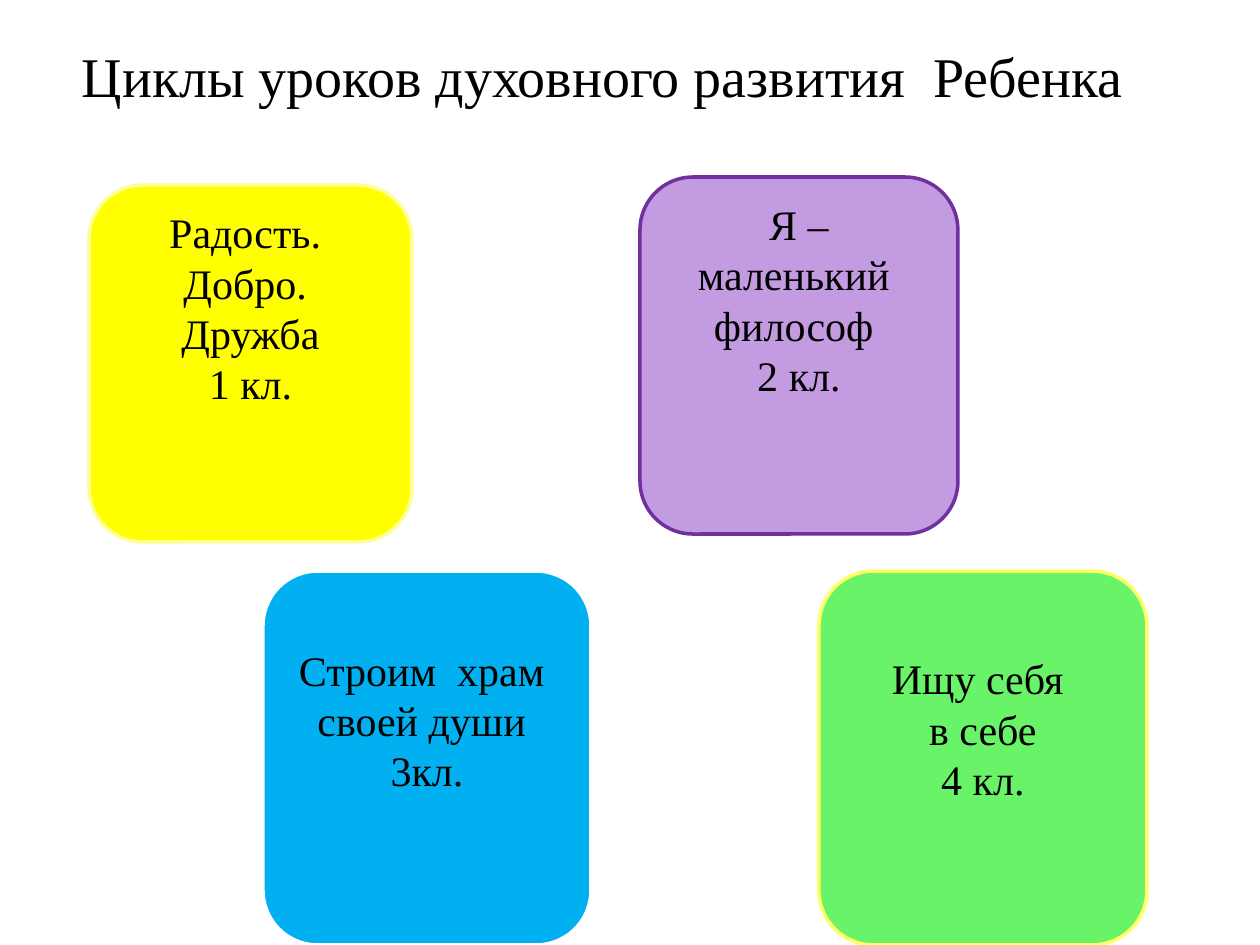
from dataclasses import dataclass

from pptx import Presentation
from pptx import util as u
from pptx.dml.color import RGBColor
from pptx.enum import shapes, text

SCALE = 914400 / 126


def px(n):
    return u.Emu(round(n * SCALE))


@dataclass(frozen=True)
class Theme:
    font: str = "Times New Roman"
    ink: str = "000000"
    head: int = 32
    body: int = 24
    lead: float = 28.8
    line: int = 2
    yellow: tuple = ("FFFF00", "FFFF99")
    purple: tuple = ("C39BE1", "7030A0")
    blue: tuple = ("00B0F0", "FFFFFF")
    green: tuple = ("69F369", "FFFF66")


def write(frame, lines, font, size, ink, align, lead=None, top=6, wrap=True):
    frame.word_wrap = wrap
    frame.auto_size = text.MSO_AUTO_SIZE.NONE
    frame.vertical_anchor = text.MSO_ANCHOR.TOP
    frame.margin_top = px(top)
    for i, line in enumerate(lines):
        para = frame.paragraphs[0] if i == 0 else frame.add_paragraph()
        para.alignment = align
        if lead:
            para.line_spacing = u.Pt(lead)
        run = para.add_run()
        run.text = line
        run.font.name = font
        run.font.size = u.Pt(size)
        run.font.color.rgb = RGBColor.from_string(ink)


class Deck:
    def __init__(self, theme):
        self.theme = theme
        self.file = Presentation()
        self.file.slide_width = px(1260)
        self.file.slide_height = px(945)
        self.slide = self.file.slides.add_slide(self.file.slide_layouts[5])

    def title(self, line, x, y, w, h):
        t = self.theme
        box = self.slide.shapes.title
        box.left, box.top, box.width, box.height = map(px, (x, y, w, h))
        write(box.text_frame, [line], font=t.font, size=t.head, ink=t.ink,
              align=text.PP_ALIGN.LEFT)

    def card(self, lines, x, y, w, h, tone, top=6):
        t = self.theme
        box = self.slide.shapes.add_shape(
            shapes.MSO_SHAPE.ROUNDED_RECTANGLE, *map(px, (x, y, w, h)))
        fill, edge = tone
        box.shadow.inherit = False
        box.fill.solid()
        box.fill.fore_color.rgb = RGBColor.from_string(fill)
        box.line.color.rgb = RGBColor.from_string(edge)
        box.line.width = u.Pt(t.line)
        write(box.text_frame, lines, font=t.font, size=t.body, ink=t.ink,
              align=text.PP_ALIGN.CENTER, lead=t.lead, top=top, wrap=False)


def main():
    theme = Theme()
    deck = Deck(theme)
    deck.title("Циклы уроков духовного развития  Ребенка", 69, 35, 1103, 81)
    deck.card(["Радость. ", "Добро. ", "Дружба", "1 кл."],
              89, 185, 323, 357, theme.yellow)
    deck.card(["Я –", "маленький ", "философ ", "2 кл."],
              640, 177, 318, 357, theme.purple)
    deck.card(["Строим  храм ", "своей души ", "3кл."],
              263, 571, 328, 374, theme.blue, top=57)
    deck.card(["Ищу себя ", "в себе", "4 кл."],
              819, 571, 328, 374, theme.green, top=66)
    deck.file.save("out.pptx")


if __name__ == "__main__":
    main()
